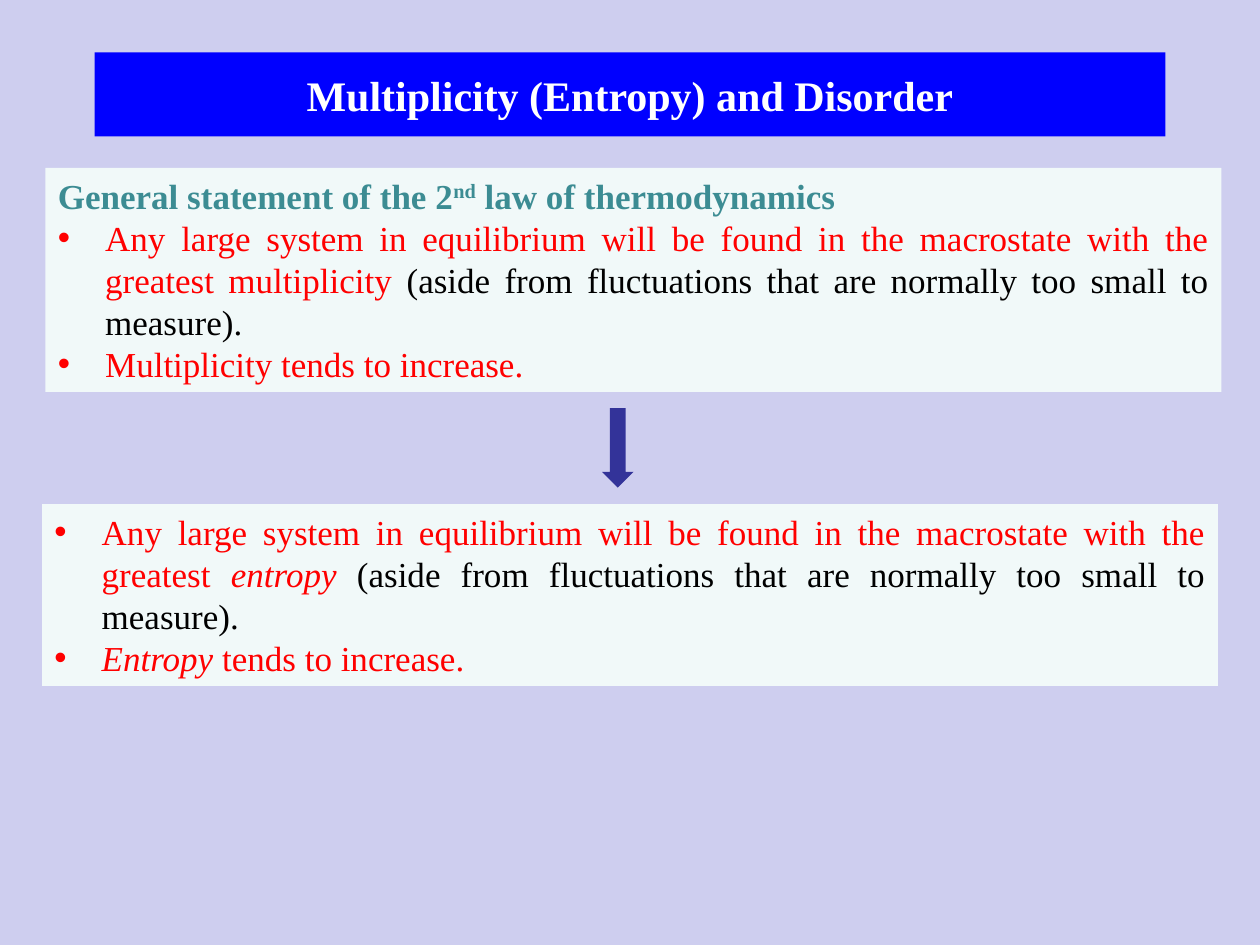
"""Build a slide on multiplicity, entropy and the second law of thermodynamics."""
from lxml import etree
from pptx import Presentation
from pptx.dml.color import RGBColor
from pptx.enum import shapes, text
from pptx.oxml import ns
from pptx.util import Pt

LAVENDER = RGBColor(0xCE, 0xCE, 0xEF)
BLUE = RGBColor(0x00, 0x00, 0xFF)
WHITE = RGBColor(0xFF, 0xFF, 0xFF)
MINT = RGBColor(0xF1, 0xF9, 0xF9)
TEAL = RGBColor(0x3C, 0x8C, 0x93)
RED = RGBColor(0xFF, 0x00, 0x00)
BLACK = RGBColor(0x00, 0x00, 0x00)
INDIGO = RGBColor(0x33, 0x33, 0x99)
FONT = "Times New Roman"


def add_run(paragraph, words, color, **formats):
    """Append a run with the given colour and font formats."""
    run = paragraph.add_run()
    run.text = words
    run.font.color.rgb = color
    for key, value in {"name": FONT, "size": Pt(20), **formats}.items():
        setattr(run.font, key, value)
    return run


def add_bullet(paragraph):
    """Give a paragraph a hanging round bullet."""
    properties = paragraph._p.get_or_add_pPr()
    properties.set("marL", str(Pt(27)))
    properties.set("indent", str(-Pt(27)))
    etree.SubElement(properties, ns.qn("a:buFont"), typeface="Arial")
    etree.SubElement(properties, ns.qn("a:buChar"), char="•")


deck = Presentation()
deck.slide_width, deck.slide_height = Pt(720), Pt(540)
slide = deck.slides.add_slide(deck.slide_layouts[5])
slide.background.fill.solid()
slide.background.fill.fore_color.rgb = LAVENDER

heading = slide.shapes.title
placement = {"left": Pt(54), "top": Pt(30), "width": Pt(612), "height": Pt(48)}
for key, value in placement.items():
    setattr(heading, key, value)
heading.fill.solid()
heading.fill.fore_color.rgb = BLUE
heading.text_frame.vertical_anchor = text.MSO_ANCHOR.MIDDLE
heading_line = heading.text_frame.paragraphs[0]
heading_line.alignment = text.PP_ALIGN.CENTER
add_run(heading_line, "Multiplicity (Entropy) and Disorder", WHITE, size=Pt(24), bold=True)

EQUILIBRIUM = "Any large system in equilibrium will be found in the macrostate with the greatest "
ASIDE = "(aside from fluctuations that are normally too small to measure)."
INCREASE = " tends to increase."
statements = [
    (26, 96, 128, "multiplicity ", "Multiplicity", False),
    (24, 288, 104, "entropy ", "Entropy", True),
]
for left, top, height, quantity, subject, italic in statements:
    statement = slide.shapes.add_textbox(Pt(left), Pt(top), Pt(672), Pt(height))
    statement.fill.solid()
    statement.fill.fore_color.rgb = MINT
    frame = statement.text_frame
    frame.word_wrap = True
    frame.auto_size = text.MSO_AUTO_SIZE.SHAPE_TO_FIT_TEXT
    equilibrium = frame.paragraphs[0]
    if not italic:
        law = equilibrium
        add_run(law, "General statement of the 2", TEAL, bold=True)
        ordinal = add_run(law, "nd", TEAL, bold=True)
        ordinal.font._element.set("baseline", "30000")
        add_run(law, " law of thermodynamics", TEAL, bold=True)
        equilibrium = frame.add_paragraph()
    add_run(equilibrium, EQUILIBRIUM, RED)
    add_run(equilibrium, quantity, RED, italic=italic)
    add_run(equilibrium, ASIDE, BLACK)
    tendency = frame.add_paragraph()
    add_run(tendency, subject, RED, italic=italic)
    add_run(tendency, INCREASE, RED)
    for paragraph in frame.paragraphs:
        paragraph.alignment = text.PP_ALIGN.JUSTIFY
    for paragraph in (equilibrium, tendency):
        add_bullet(paragraph)

implication = slide.shapes.add_shape(
    shapes.MSO_SHAPE.DOWN_ARROW, Pt(344), Pt(233.2), Pt(18), Pt(45.5))
implication.shadow.inherit = False
implication.fill.solid()
implication.fill.fore_color.rgb = INDIGO
implication.line.fill.background()

deck.save("out.pptx")
